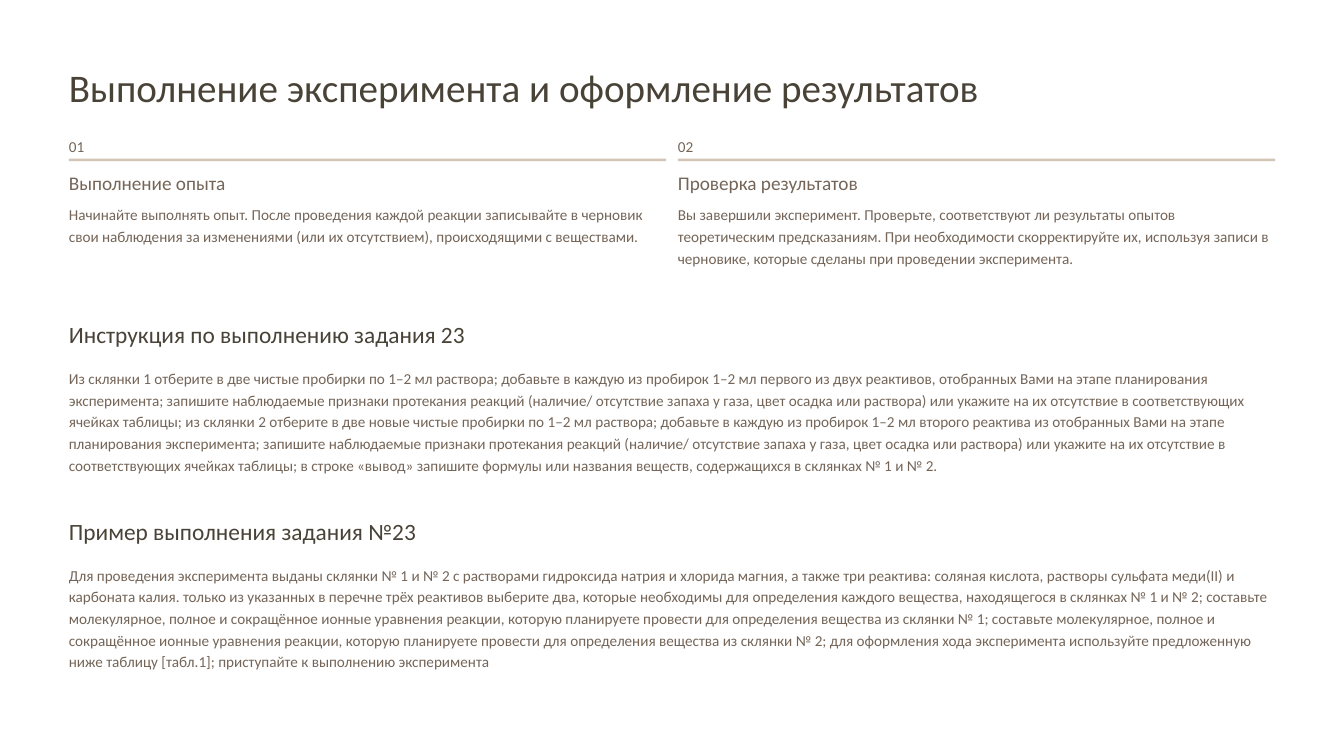
from pptx import Presentation
from pptx.dml.color import RGBColor
from pptx.enum.shapes import MSO_SHAPE as Shape
from pptx.util import Inches, Pt

DARK, BROWN, SAND = "484237", "746558", "D3C5B6"
LEFT, WIDTH = 0.82, 14.37
COL, GAP = 7.11, 0.14

STEPS = [
    ("01", "Выполнение опыта",
     "Начинайте выполнять опыт. После проведения каждой реакции записывайте в черновик "
     "свои наблюдения за изменениями (или их отсутствием), происходящими с веществами."),
    ("02", "Проверка результатов",
     "Вы завершили эксперимент. Проверьте, соответствуют ли результаты опытов теоретическим "
     "предсказаниям. При необходимости скорректируйте их, используя записи в черновике, "
     "которые сделаны при проведении эксперимента."),
]

TASKS = [
    ("Инструкция по выполнению задания 23",
     "Из склянки 1 отберите в две чистые пробирки по 1–2 мл раствора; добавьте в каждую из "
     "пробирок 1–2 мл первого из двух реактивов, отобранных Вами на этапе планирования "
     "эксперимента; запишите наблюдаемые признаки протекания реакций (наличие/ отсутствие "
     "запаха у газа, цвет осадка или раствора) или укажите на их отсутствие в соответствующих "
     "ячейках таблицы; из склянки 2 отберите в две новые чистые пробирки по 1–2 мл раствора; "
     "добавьте в каждую из пробирок 1–2 мл второго реактива из отобранных Вами на этапе "
     "планирования эксперимента; запишите наблюдаемые признаки протекания реакций (наличие/ "
     "отсутствие запаха у газа, цвет осадка или раствора) или укажите на их отсутствие в "
     "соответствующих ячейках таблицы; в строке «вывод» запишите формулы или названия веществ, "
     "содержащихся в склянках № 1 и № 2."),
    ("Пример выполнения задания №23",
     "Для проведения эксперимента выданы склянки № 1 и № 2 с растворами гидроксида натрия и "
     "хлорида магния, а также три реактива: соляная кислота, растворы сульфата меди(II) и "
     "карбоната калия. только из указанных в перечне трёх реактивов выберите два, которые "
     "необходимы для определения каждого вещества, находящегося в склянках № 1 и № 2; составьте "
     "молекулярное, полное и сокращённое ионные уравнения реакции, которую планируете провести "
     "для определения вещества из склянки № 1; составьте молекулярное, полное и сокращённое "
     "ионные уравнения реакции, которую планируете провести для определения вещества из склянки "
     "№ 2; для оформления хода эксперимента используйте предложенную ниже таблицу [табл.1]; "
     "приступайте к выполнению эксперимента"),
]


def color(code):
    return RGBColor.from_string(code)


def add_text(slide, text, x, y, w, h, size=13, line=18.5, tint=BROWN, wrap=False):
    box = slide.shapes.add_textbox(Inches(x), Inches(y), Inches(w), Inches(h))
    frame = box.text_frame
    frame.margin_left = frame.margin_right = frame.margin_top = frame.margin_bottom = 0
    frame.word_wrap = wrap
    frame.text = text
    para = frame.paragraphs[0]
    para.line_spacing = Pt(line)
    font = para.runs[0].font
    font.name, font.size = "Calibri", Pt(size)
    font.color.rgb = color(tint)


def add_step(slide, step, x, y, w):
    num, head, body = step
    add_text(slide, num, x, y, 0.19, 0.23)
    # Rule under the number
    rule = slide.shapes.add_shape(
        Shape.RECTANGLE, Inches(x), Inches(y + 0.29), Inches(w), Inches(0.03))
    rule.shadow.inherit = False
    rule.fill.solid()
    rule.fill.fore_color.rgb = color(SAND)
    rule.line.fill.background()
    # Heading and body
    add_text(slide, head, x, y + 0.43, w, 0.29, 16.5, 20.5)
    add_text(slide, body, x, y + 0.81, w, 1.04, wrap=True)


def add_task(slide, task, x, y, w):
    head, body = task
    add_text(slide, head, x, y, w, 0.35, 20, 25, DARK)
    add_text(slide, body, x, y + 0.56, w, 1.57, wrap=True)


def main():
    deck = Presentation()
    deck.slide_width, deck.slide_height = Inches(16), Inches(9)
    slide = deck.slides.add_slide(deck.slide_layouts[6])

    # Title
    add_text(slide, "Выполнение эксперимента и оформление результатов",
             LEFT, 0.74, 12.56, 0.58, 33.5, 41.5, DARK)
    # Two steps side by side
    for i, step in enumerate(STEPS):
        add_step(slide, step, LEFT + i * (COL + GAP), 1.6, COL)
    # Two tasks, one below the other
    for i, task in enumerate(TASKS):
        add_task(slide, task, LEFT, 3.8 + i * 2.34, WIDTH)

    deck.save("out.pptx")


if __name__ == "__main__":
    main()
